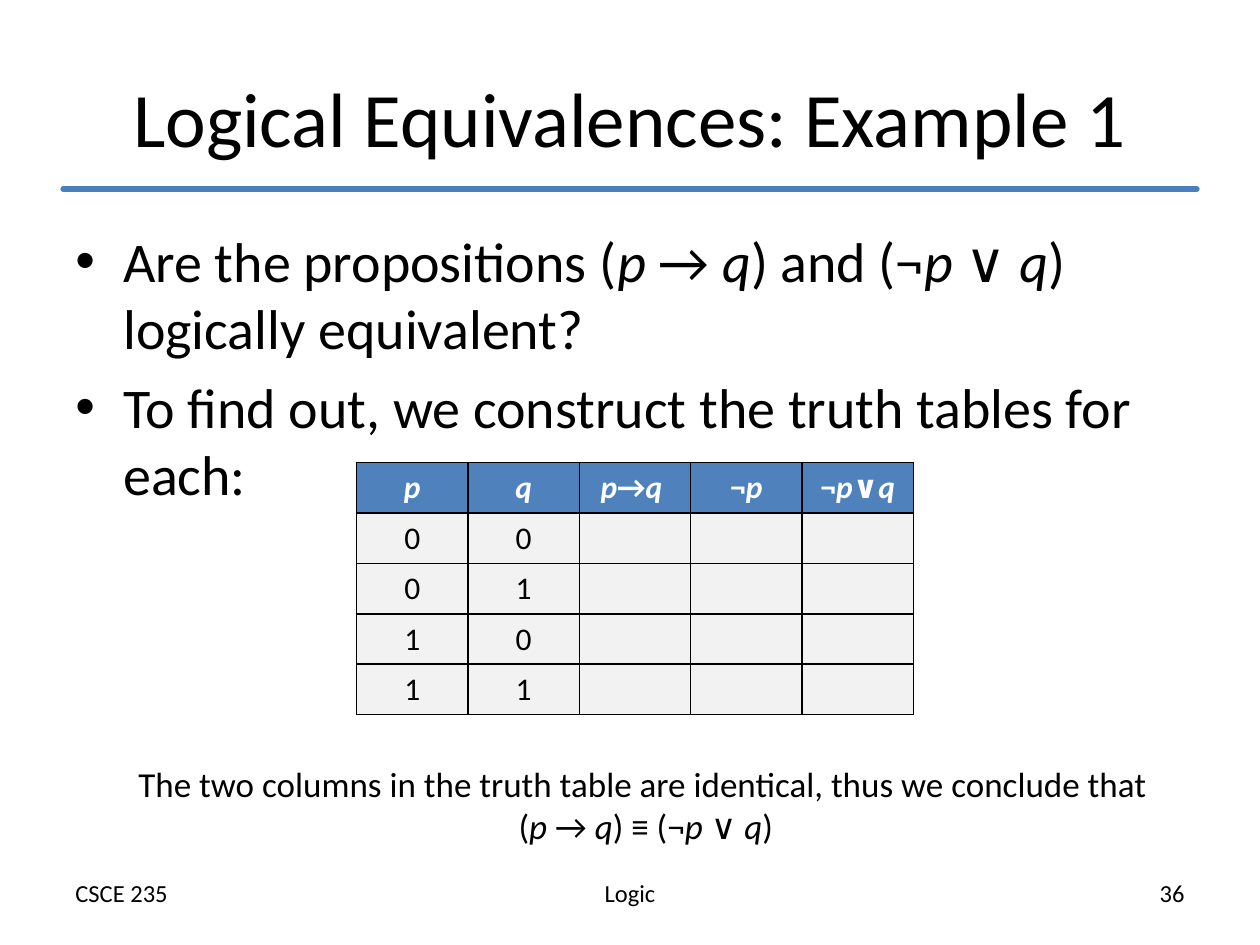
import itertools

import pptx
import pptx.dml.color
import pptx.enum.shapes
import pptx.enum.text
import pptx.oxml.ns
import pptx.util
from lxml import etree

PX = 9144  # EMU per px, 100 px to the inch
FONT = "Calibri"
COLORS = {
    "text": "000000",
    "rule": "4B7EBC",
    "header": "4F81BD",
    "header_text": "FFFFFF",
    "cell": "F2F2F2",
    "border": "000000",
}
ALIGN = pptx.enum.text.PP_ALIGN
ANCHOR = pptx.enum.text.MSO_ANCHOR


def emu(*lengths):
    return [pptx.util.Emu(length * PX) for length in lengths]


def rgb(name):
    return pptx.dml.color.RGBColor.from_string(COLORS[name])


def add_xml(parent, tag, **attributes):
    return etree.SubElement(parent, pptx.oxml.ns.qn(tag), attributes)


def set_all(target, values):
    for name, value in values.items():
        setattr(target, name, value)


def write_line(paragraph, text, size, align=ALIGN.LEFT, color="text", bold=False):
    """Write one paragraph; parts between asterisks are italic."""
    paragraph.alignment = align
    for part, italic in zip(text.split("*"), itertools.cycle((False, True))):
        if part:
            run = paragraph.add_run()
            run.text = part
            set_all(run.font, {"name": FONT, "size": pptx.util.Pt(size),
                               "bold": bold, "italic": italic})
            run.font.color.rgb = rgb(color)


def add_text(slide, box, lines, size, aligns, anchor=ANCHOR.TOP):
    frame = slide.shapes.add_textbox(*emu(*box)).text_frame
    set_all(frame, {"word_wrap": True, "vertical_anchor": anchor})
    for number, (line, align) in enumerate(zip(lines, aligns)):
        paragraph = frame.add_paragraph() if number else frame.paragraphs[0]
        write_line(paragraph, line, size, align)
    return frame


def add_heading(slide, box, title):
    left, top, width, height = box
    add_text(slide, box, [title], 44, [ALIGN.CENTER], ANCHOR.MIDDLE)
    # Rule under the title
    rule_y = top + height - 5
    rule = slide.shapes.add_connector(
        pptx.enum.shapes.MSO_CONNECTOR.STRAIGHT,
        *emu(left, rule_y, left + width, rule_y))
    rule.line.color.rgb = rgb("rule")
    rule.line.width = pptx.util.Pt(3)
    rule.line._get_or_add_ln().set("cap", "rnd")
    add_xml(rule._element.spPr, "a:effectLst")


def add_bullets(slide, box, lines):
    frame = add_text(slide, box, lines, 32, [ALIGN.LEFT] * len(lines))
    indent = emu(38)[0]
    for paragraph in frame.paragraphs:
        paragraph.space_before = pptx.util.Pt(6.4)
        properties = paragraph._p.get_or_add_pPr()
        properties.set("marL", str(indent))
        properties.set("indent", str(-indent))
        add_xml(properties, "a:buFont", typeface="Arial")
        add_xml(properties, "a:buChar", char="•")


def add_borders(cell):
    properties = cell._tc.get_or_add_tcPr()
    for number, side in enumerate(("a:lnL", "a:lnR", "a:lnT", "a:lnB")):
        border = etree.Element(pptx.oxml.ns.qn(side), w=str(pptx.util.Pt(1)))
        add_xml(add_xml(border, "a:solidFill"), "a:srgbClr", val=COLORS["border"])
        properties.insert(number, border)


def add_truth_table(slide, box, headers):
    # Input values in order; the result columns stay open
    inputs = itertools.product("01", repeat=2)
    rows = [headers] + [[*values, "", "", ""] for values in inputs]
    table = slide.shapes.add_table(len(rows), len(headers), *emu(*box)).table
    table.horz_banding = False
    for row_number, row in enumerate(rows):
        is_header = row_number == 0
        for column_number, text in enumerate(row):
            cell = table.cell(row_number, column_number)
            cell.fill.solid()
            cell.fill.fore_color.rgb = rgb("header" if is_header else "cell")
            add_borders(cell)
            write_line(cell.text_frame.paragraphs[0], text, 18, ALIGN.CENTER,
                       "header_text" if is_header else "text", is_header)


def add_footer(slide, box, course, topic, number):
    left, top, width, height = box
    column = 292
    step = (width - column) // 2
    entries = ((course, ALIGN.LEFT), (topic, ALIGN.CENTER), (number, ALIGN.RIGHT))
    for place, (text, align) in enumerate(entries):
        add_text(slide, (left + place * step, top, column, height),
                 [text], 14, [align])


def main():
    deck = pptx.Presentation()
    deck.slide_width, deck.slide_height = emu(1000, 750)
    slide = deck.slides.add_slide(deck.slide_layouts[6])

    add_footer(slide, (50, 692, 900, 34), "CSCE 235", "Logic", "36")
    add_heading(slide, (50, 30, 900, 125), "Logical Equivalences: Example 1")
    add_bullets(slide, (50, 175, 900, 495), [
        "Are the propositions (*p *→ *q*) and (¬*p *∨ *q*) logically equivalent?",
        "To find out, we construct the truth tables for each:",
    ])
    add_truth_table(slide, (283, 367, 442, 200),
                    ["*p*", "*q*", "*p*→*q *", "¬*p*", "¬*p*∨*q*"])
    # Conclusion
    add_text(slide, (100, 600, 825, 77), [
        "The two columns in the truth table are identical, thus we conclude that",
        "(*p *→ *q*) ≡ (¬*p *∨ *q*)",
    ], 20, [ALIGN.LEFT, ALIGN.CENTER])

    deck.save("out.pptx")


if __name__ == "__main__":
    main()
